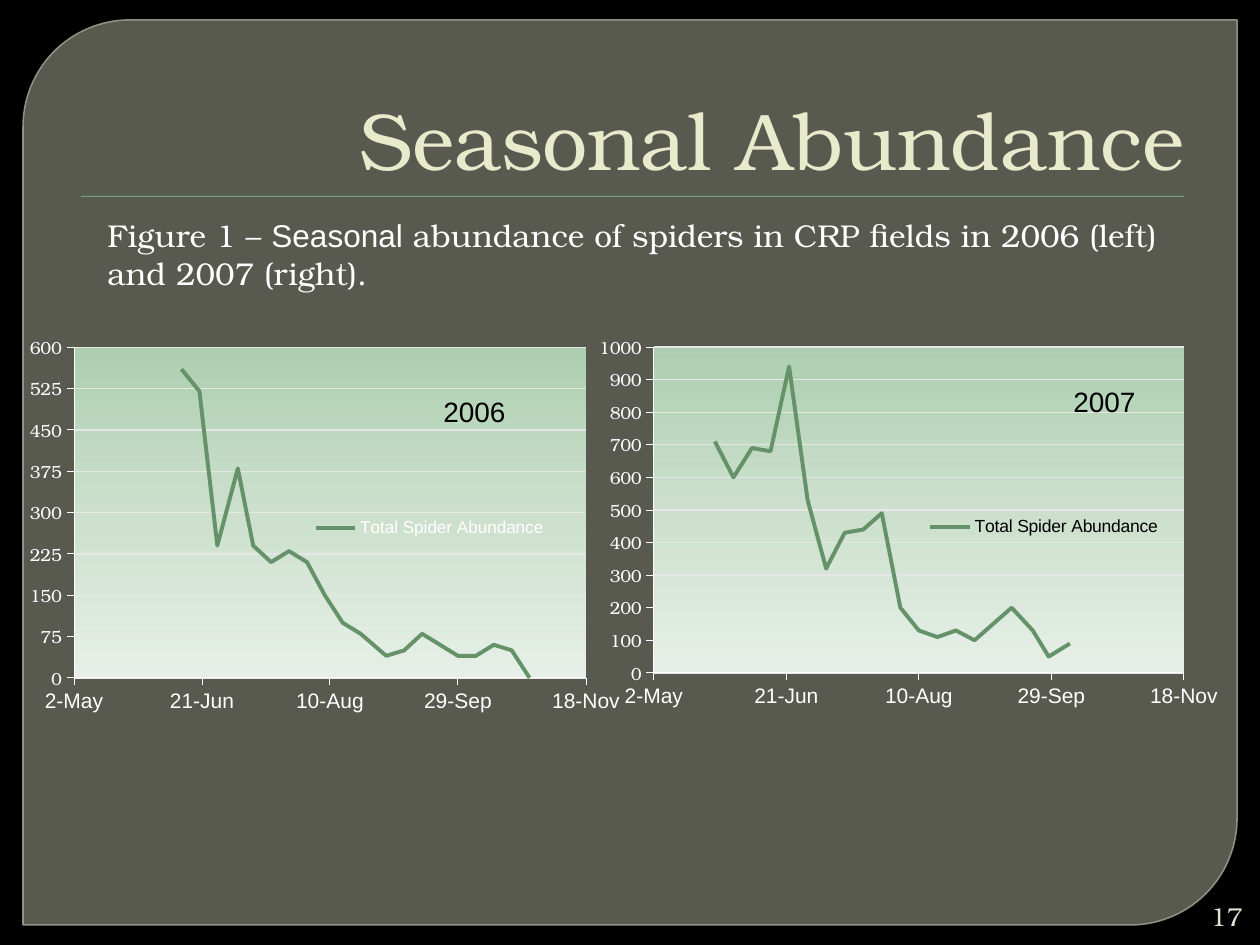
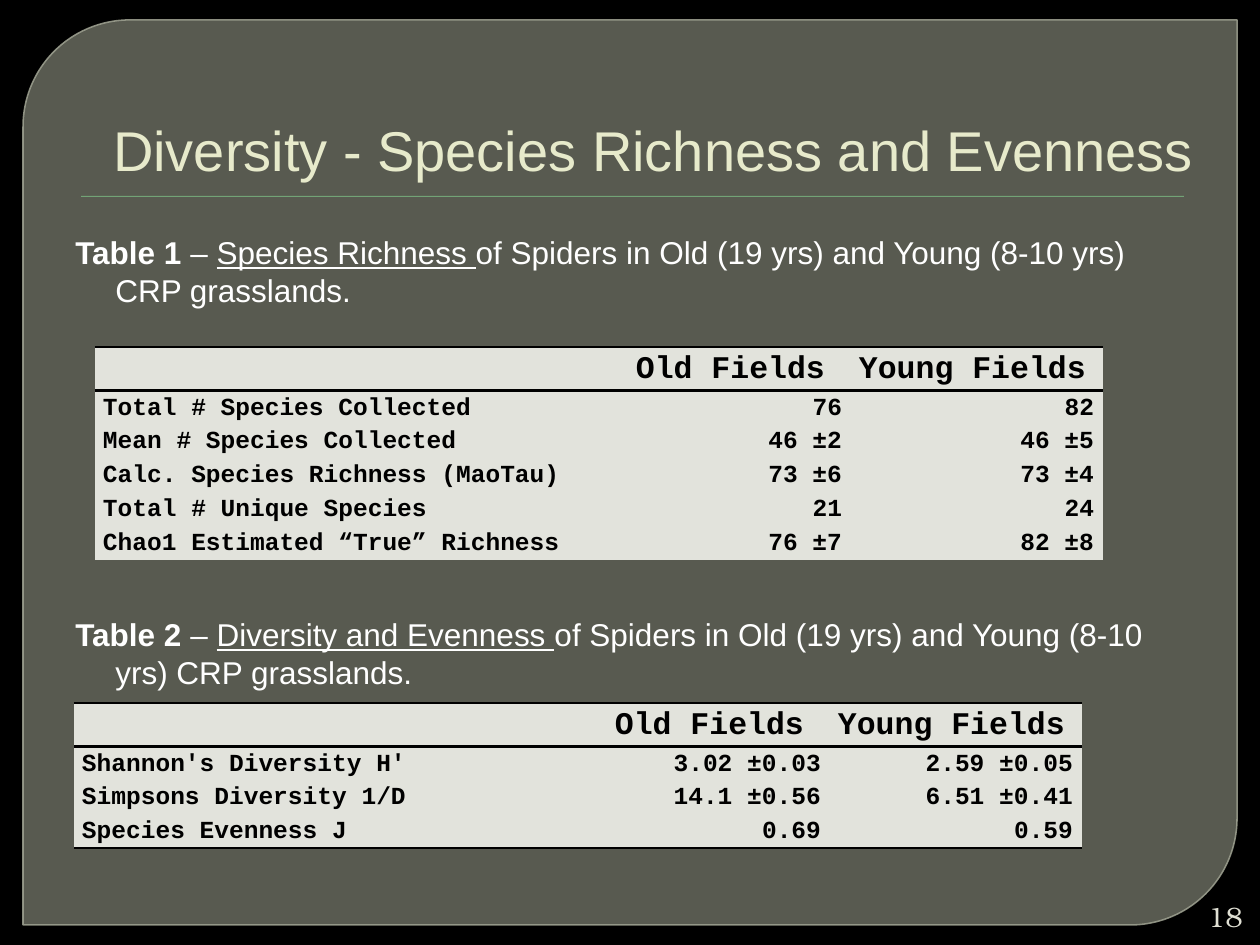
"""Build two slides on spider abundance and diversity in CRP grasslands."""
import pptx
import pptx.chart.data
import pptx.dml.color
import pptx.enum.chart
import pptx.enum.shapes
import pptx.enum.text
import pptx.oxml
import pptx.oxml.ns
import pptx.util

PX = 914400 / 126
SERIF, SANS, MONO = "TeX Gyre Bonum", "Arial", "Courier New"
NO_GRID_STYLE = "{2D5ABB26-0587-4C30-8999-92F81FD0307C}"
COLORS = {
    "background": "000000", "panel": "888B7B", "panel_line": "9DA090",
    "accent": "72A376", "series": "659268", "title": "E7EACB", "number": "E0E0D4",
    "light": "FFFFFF", "dark": "000000", "grid": "E6E6E6", "cell": "E2E3DC",
    "plot_top": "ADCFAF", "plot_middle": "CCE0CD", "plot_bottom": "E6EFE7",
}
ALIGN = pptx.enum.text.PP_ALIGN
ANCHOR = pptx.enum.text.MSO_ANCHOR

SERIES_NAME = "Total Spider Abundance"
CHARTS = [
    {
        "year": "2006", "year_box": (431, 388, 95, 47),
        "frame": (21, 336, 599, 388), "plot": (74, 347, 512, 331),
        "legend": (313, 514, 233, 28), "legend_color": "light", "legend_size": 9.8,
        "first_day": 38839, "top": 600, "step": 75,
        "days": [42, 49, 56, 64, 70, 77, 84, 91, 98, 105,
                 112, 122, 129, 136, 143, 150, 157, 164, 171, 178],
        "counts": [560, 520, 240, 380, 240, 210, 230, 210, 150, 100,
                   80, 40, 50, 80, 60, 40, 40, 60, 50, 0],
    },
    {
        "year": "2007", "year_box": (1061, 378, 95, 47),
        "frame": (588, 325, 640, 420), "plot": (654, 347, 530, 326),
        "legend": (924, 513, 240, 28), "legend_color": "dark", "legend_size": 10,
        "first_day": 39204, "top": 1000, "step": 100,
        "days": [23, 30, 37, 44, 51, 58, 65, 72, 79, 86,
                 93, 100, 107, 114, 121, 135, 143, 149, 157],
        "counts": [710, 600, 690, 680, 940, 530, 320, 430, 440, 490,
                   200, 130, 110, 130, 100, 200, 130, 50, 90],
    },
]
FIGURE_CAPTION = [
    ("Figure 1 – ", {}),
    ("Seasonal", {"name": SANS}),
    (" abundance of spiders in CRP fields in 2006 (left) and 2007 (right).", {}),
]
HEADINGS = ("", " Old Fields", "Young Fields")
COLUMN_WIDTHS = (514, 242, 252)
SUBJECT = "of Spiders in Old (19 yrs) and Young (8-10 yrs) CRP grasslands."
TABLES = [
    {
        "caption": [("Table 1 ", {"bold": True}), ("– ", {}),
                    ("Species Richness ", {"underline": True}), (SUBJECT, {})],
        "caption_box": (63, 227, 1134, 110), "corner": (95, 347), "closed": False,
        "rows": [
            ("Total # Species Collected", "76", "82"),
            ("Mean # Species Collected", "46 ±2", "46 ±5"),
            ("Calc. Species Richness (MaoTau)", "73 ±6", "73 ±4"),
            ("Total # Unique Species", "21", "24"),
            ("Chao1 Estimated “True” Richness", "76 ±7", "82 ±8"),
        ],
    },
    {
        "caption": [("Table 2", {"bold": True}), (" – ", {}),
                    ("Diversity and Evenness ", {"underline": True}), (SUBJECT, {})],
        "caption_box": (63, 609, 1134, 94), "corner": (74, 703), "closed": True,
        "rows": [
            ("Shannon's Diversity H'", "3.02 ±0.03", "2.59 ±0.05"),
            ("Simpsons Diversity 1/D", "14.1 ±0.56", "6.51 ±0.41"),
            ("Species Evenness J", "0.69", "0.59"),
        ],
    },
]


def px(length):
    return pptx.util.Emu(round(length * PX))


def box(lengths):
    return [px(length) for length in lengths]


def rgb(color):
    return pptx.dml.color.RGBColor.from_string(COLORS[color])


def qn(tag):
    return pptx.oxml.ns.qn(tag)


def xml(tag, body="", attributes=""):
    spaces = pptx.oxml.ns.nsdecls("a", "c")
    return pptx.oxml.parse_xml(f"<{tag} {spaces} {attributes}>{body}</{tag}>")


def set_font(font, name, size, color, bold=False):
    font.name, font.size, font.bold = name, pptx.util.Pt(size), bold
    font.color.rgb = rgb(color)


def set_line(line, color, width):
    line.color.rgb = rgb(color)
    line.width = pptx.util.Pt(width)


def set_indent(paragraph, left, first):
    properties = paragraph._p.get_or_add_pPr()
    properties.set("marL", str(px(left)))
    properties.set("indent", str(px(first)))


def set_alpha(color_parent, percent):
    color = color_parent.find(".//" + qn("a:srgbClr"))
    color.append(xml("a:alpha", attributes=f'val="{percent * 1000}"'))


def add_text(slide, bounds, runs, name, size, color):
    shape = slide.shapes.add_textbox(*box(bounds))
    shape.text_frame.word_wrap = True
    paragraph = shape.text_frame.paragraphs[0]
    set_font(paragraph.font, name, size, color)
    for text, formats in runs:
        run = paragraph.add_run()
        run.text = text
        for attribute, value in formats.items():
            setattr(run.font, attribute, value)
    return shape


def add_base_shape(slide, kind, bounds, color):
    shape = slide.shapes.add_shape(kind, *box(bounds))
    shape.shadow.inherit = False
    shape.fill.solid()
    shape.fill.fore_color.rgb = rgb(color)
    shape.line.fill.background()
    return shape


def add_slide(presentation, title, title_box, name, size, number, number_size):
    slide = presentation.slides.add_slide(presentation.slide_layouts[5])
    shapes = pptx.enum.shapes.MSO_SHAPE
    panel = add_base_shape(slide, shapes.ROUND_2_DIAG_RECTANGLE, (23, 20, 1214, 905), "panel")
    panel.adjustments[0], panel.adjustments[1] = 0.118, 0
    set_line(panel.line, "panel_line", 0.87)
    properties = panel.element.spPr
    set_alpha(properties.find(qn("a:solidFill")), 65)
    set_alpha(properties.find(qn("a:ln")), 88)
    add_base_shape(slide, shapes.RECTANGLE, (81, 196, 1103, 1), "accent")

    shape = slide.shapes.title
    slide.shapes.element.append(shape.element)
    shape.left, shape.top, shape.width, shape.height = box(title_box)
    frame = shape.text_frame
    frame.text = title
    frame.auto_size = pptx.enum.text.MSO_AUTO_SIZE.NONE
    frame.vertical_anchor = ANCHOR.BOTTOM
    paragraph = frame.paragraphs[0]
    paragraph.alignment = ALIGN.RIGHT
    set_indent(paragraph, 8, 0)
    set_font(paragraph.font, name, size, "title")

    footer = add_text(slide, (1191, 897, 64, 38), [(number, {})], SERIF, number_size, "number")
    footer.text_frame.vertical_anchor = ANCHOR.MIDDLE
    footer.text_frame.paragraphs[0].alignment = ALIGN.RIGHT
    return slide


def manual_layout(part, frame, inner=False):
    left, top, width, height = frame
    fractions = {
        "x": (part[0] - left) / width, "y": (part[1] - top) / height,
        "w": part[2] / width, "h": part[3] / height,
    }
    target = '<c:layoutTarget val="inner"/>' if inner else ""
    modes = '<c:xMode val="edge"/><c:yMode val="edge"/>'
    values = "".join(f'<c:{key} val="{value:.4f}"/>' for key, value in fractions.items())
    return xml("c:layout", f"<c:manualLayout>{target}{modes}{values}</c:manualLayout>")


def drop_layout(element):
    for layout in element.findall(qn("c:layout")):
        element.remove(layout)


def format_axis(axis, low, high, step, name, size):
    axis.minimum_scale, axis.maximum_scale, axis.major_unit = low, high, step
    axis.major_tick_mark = pptx.enum.chart.XL_TICK_MARK.OUTSIDE
    axis.minor_tick_mark = pptx.enum.chart.XL_TICK_MARK.NONE
    set_line(axis.format.line, "light", 0.5)
    set_font(axis.tick_labels.font, name, size, "light")


def add_abundance_chart(slide, item):
    first_day, frame = item["first_day"], item["frame"]
    data = pptx.chart.data.XyChartData()
    points = data.add_series(SERIES_NAME)
    for day, count in zip(item["days"], item["counts"]):
        points.add_data_point(first_day + day, count)
    kind = pptx.enum.chart.XL_CHART_TYPE.XY_SCATTER_LINES_NO_MARKERS
    chart = slide.shapes.add_chart(kind, *box(frame), data).chart
    chart.has_title = False
    set_font(chart.font, SERIF, 10, "light")
    chart.plots[0].vary_by_categories = False
    set_line(chart.plots[0].series[0].format.line, "series", 2.25)

    dates, counts = chart.category_axis, chart.value_axis
    format_axis(dates, first_day, first_day + 200, 50, SANS, 12)
    dates.has_major_gridlines = False
    dates.tick_labels.number_format = "d-mmm"
    dates.tick_labels.number_format_is_linked = False
    format_axis(counts, 0, item["top"], item["step"], SERIF, 10)
    counts.has_major_gridlines = True
    set_line(counts.major_gridlines.format.line, "grid", 0.75)

    chart.has_legend = True
    chart.legend.position = pptx.enum.chart.XL_LEGEND_POSITION.RIGHT
    chart.legend.include_in_layout = False
    set_font(chart.legend.font, SANS, item["legend_size"], item["legend_color"])
    legend = chart.element.find(".//" + qn("c:legend"))
    drop_layout(legend)
    legend.find(qn("c:legendPos")).addnext(manual_layout(item["legend"], frame))

    plot_area = chart.element.find(".//" + qn("c:plotArea"))
    drop_layout(plot_area)
    plot_area.insert(0, manual_layout(item["plot"], frame, inner=True))
    stops = "".join(
        f'<a:gs pos="{index * 50000}"><a:srgbClr val="{COLORS[color]}"/></a:gs>'
        for index, color in enumerate(("plot_top", "plot_middle", "plot_bottom")))
    gradient = f'<a:gradFill><a:gsLst>{stops}</a:gsLst><a:lin ang="5400000" scaled="0"/></a:gradFill>'
    plot_area.append(xml("c:spPr", gradient))


def set_border(cell, side, drawn):
    solid = f'<a:solidFill><a:srgbClr val="{COLORS["dark"]}"/></a:solidFill>'
    width = f'w="{pptx.util.Pt(1.5)}"'
    line = xml(f"a:ln{side}", solid if drawn else "<a:noFill/>", width)
    cell._tc.get_or_add_tcPr().insert(0, line)


def fill_cell(cell, text, size, alignment):
    cell.margin_left, cell.margin_right = px(8), px(9)
    cell.margin_top = cell.margin_bottom = 0
    cell.fill.solid()
    cell.fill.fore_color.rgb = rgb("cell")
    if not text:
        return
    paragraph = cell.text_frame.paragraphs[0]
    paragraph.alignment = alignment
    paragraph.line_spacing = 1.15
    paragraph.space_after = pptx.util.Pt(10)
    run = paragraph.add_run()
    run.text = text
    set_font(run.font, MONO, size, "dark", bold=True)


def add_species_table(slide, item):
    rows = [HEADINGS, *item["rows"]]
    heights = [40] + [31] * len(item["rows"])
    bounds = (*item["corner"], sum(COLUMN_WIDTHS), sum(heights))
    table = slide.shapes.add_table(len(rows), len(HEADINGS), *box(bounds)).table
    table.first_row = table.horz_banding = False
    table._tbl.tblPr.find(qn("a:tableStyleId")).text = NO_GRID_STYLE
    for column, width in zip(table.columns, COLUMN_WIDTHS):
        column.width = px(width)
    for row_index, texts in enumerate(rows):
        table.rows[row_index].height = px(heights[row_index])
        is_header, is_last = row_index == 0, row_index == len(rows) - 1
        for column_index, text in enumerate(texts):
            cell = table.cell(row_index, column_index)
            is_value = column_index > 0 and not is_header
            fill_cell(cell, text, 18 if is_header else 14, ALIGN.RIGHT if is_value else ALIGN.LEFT)
            set_border(cell, "B", is_header or (is_last and item["closed"]))
            set_border(cell, "T", row_index < 2)


def main():
    presentation = pptx.Presentation()
    presentation.slide_width, presentation.slide_height = px(1260), px(945)
    background = presentation.slide_master.background.fill
    background.solid()
    background.fore_color.rgb = rgb("background")

    slide = add_slide(presentation, "Seasonal Abundance", (63, 35, 1134, 158), SERIF, 46, "17", 14.8)
    for item in CHARTS:
        add_abundance_chart(slide, item)
    add_text(slide, (95, 210, 1103, 89), FIGURE_CAPTION, SERIF, 18, "light")
    for item in CHARTS:
        add_text(slide, item["year_box"], [(item["year"], {})], SANS, 16, "dark")

    slide = add_slide(presentation, "Diversity - Species Richness and Evenness",
                      (73, 31, 1134, 158), SANS, 32, "18", 16)
    for item in TABLES:
        caption = add_text(slide, item["caption_box"], item["caption"], SANS, 18, "light")
        set_indent(caption.text_frame.paragraphs[0], 40, -40)
        add_species_table(slide, item)
    presentation.save("out.pptx")


if __name__ == "__main__":
    main()
